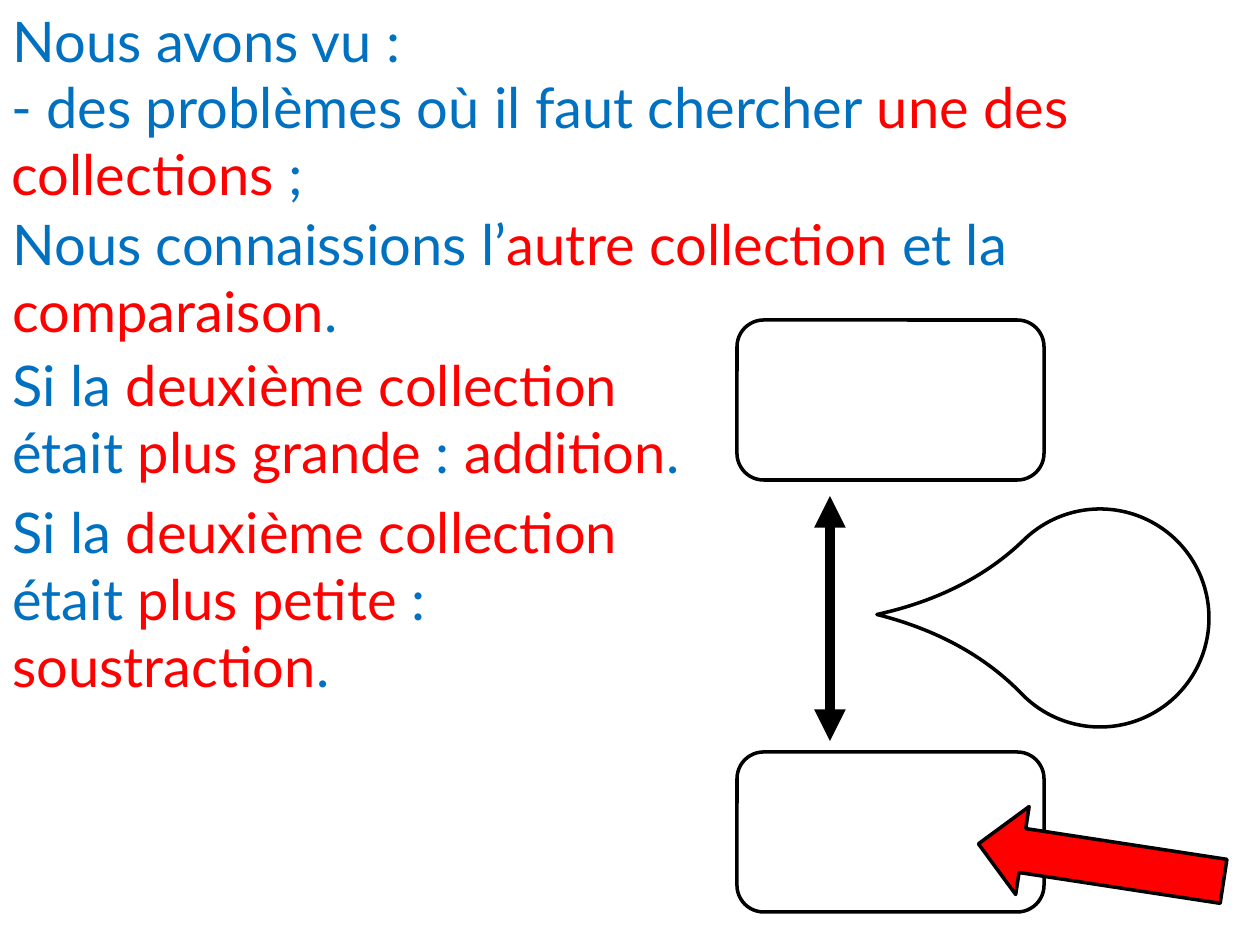
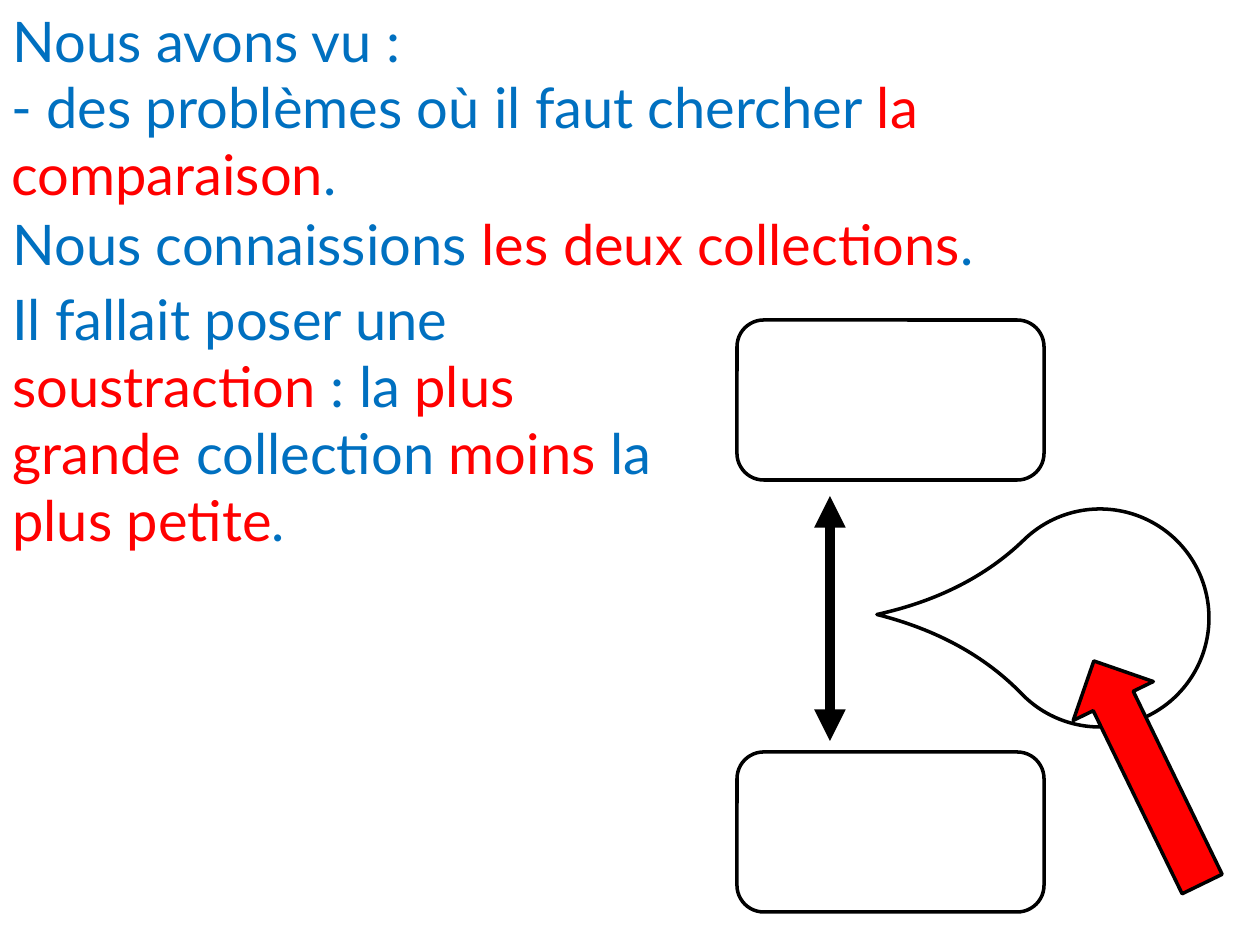
from lxml.etree import SubElement
from pptx import Presentation
from pptx.dml.color import RGBColor
from pptx.enum.shapes import MSO_CONNECTOR, MSO_SHAPE
from pptx.enum.text import MSO_ANCHOR, MSO_AUTO_SIZE, PP_ALIGN
from pptx.oxml.ns import qn
from pptx.util import Pt

EMU_PER_PX = 914400 / 126
SLIDE_W, SLIDE_H = 1260, 945
BLUE, RED, BLACK = "0070C0", "FF0000", "000000"
FONT, TEXT_SIZE = "Lato", 32
TITLE = "Nous avons vu :"
TITLE_BOX = (0, 0, SLIDE_W, 81)
DIAGRAM_BOX = (737, 320, 472, 592)
COLLECTION_W, COLLECTION_H = 307, 160

# Each statement: its box and its wording, alternately blue and red.
# Each pointer: left and top within the diagram, and rotation.
SLIDES = [
    {
        "statements": [
            ((-1, 66, SLIDE_W, 149),
             ["- des problèmes où il faut chercher ", "une des collections", " ;"]),
            ((0, 203, SLIDE_W, 149),
             ["Nous connaissions l’", "autre collection ", "et la ", "comparaison", "."]),
            ((0, 344, 709, 149),
             ["Si la ", "deuxième collection ", "était ", "plus grande ", ": ",
              "addition", "."]),
            ((0, 491, 709, 217),
             ["Si la ", "deuxième collection ", "était ", "plus petite ", ": ",
              "soustraction", "."]),
        ],
        "pointer": (240, 498, 188.7),
    },
    {
        "statements": [
            ((-1, 66, SLIDE_W, 149),
             ["- des problèmes où il faut chercher ", "la comparaison", "."]),
            ((0, 203, SLIDE_W, 81),
             ["Nous connaissions ", "les deux collections", "."]),
            ((0, 278, 709, 285),
             ["Il fallait poser une ", "soustraction", " : la ", "plus grande ",
              "collection ", "moins", " la ", "plus petite", "."]),
        ],
        "pointer": (287, 408, 244.1),
    },
]


def px(*lengths):
    return [round(length * EMU_PER_PX) for length in lengths]


def color(hex_code):
    return RGBColor.from_string(hex_code)


def write(frame, wording):
    frame.word_wrap = True
    frame.auto_size = MSO_AUTO_SIZE.SHAPE_TO_FIT_TEXT
    frame.vertical_anchor = MSO_ANCHOR.TOP
    paragraph = frame.paragraphs[0]
    paragraph.alignment = PP_ALIGN.LEFT
    for index, words in enumerate(wording):
        run = paragraph.add_run()
        run.text = words
        run.font.name = FONT
        run.font.size = Pt(TEXT_SIZE)
        run.font.color.rgb = color(RED if index % 2 else BLUE)


def add_title(slide, box):
    title = slide.shapes.title
    title.left, title.top, title.width, title.height = px(*box)
    write(title.text_frame, [TITLE])


def add_statement(slide, box, wording):
    write(slide.shapes.add_textbox(*px(*box)).text_frame, wording)


def add_outlined(slide, preset, box, fill=None, rotation=0):
    shape = slide.shapes.add_shape(preset, *px(*box))
    shape.shadow.inherit = False
    shape.rotation = rotation
    shape.line.color.rgb = color(BLACK)
    shape.line.width = Pt(2)
    if fill:
        shape.fill.solid()
        shape.fill.fore_color.rgb = color(fill)
    else:
        shape.fill.background()
    return shape


def add_double_arrow(slide, x, top, bottom):
    arrow = slide.shapes.add_connector(MSO_CONNECTOR.STRAIGHT, *px(x, top, x, bottom))
    arrow.line.color.rgb = color(BLACK)
    arrow.line.width = Pt(6)
    line = arrow.line._get_or_add_ln()
    for end in ("a:headEnd", "a:tailEnd"):
        SubElement(line, qn(end), type="triangle")
    SubElement(arrow._element.spPr, qn("a:effectLst"))


def add_diagram(slide, box, pointer):
    left, top, width, height = box
    # The two collections, at the top and bottom of the diagram
    for collection_top in (top, top + height - COLLECTION_H):
        add_outlined(slide, MSO_SHAPE.ROUNDED_RECTANGLE,
                     (left, collection_top, COLLECTION_W, COLLECTION_H))
    # Their comparison
    add_double_arrow(slide, left + 93, top + 176, top + 421)
    bubble_size = 218
    bubble = add_outlined(slide, MSO_SHAPE.TEAR,
                          (left + width - bubble_size, top + 189, bubble_size, bubble_size),
                          rotation=225.9)
    bubble.adjustments[0] = 1.447
    # Red arrow towards the part to find
    x, y, rotation = pointer
    add_outlined(slide, MSO_SHAPE.RIGHT_ARROW, (left + x, top + y, 248, 89), RED, rotation)


def add_problem_slide(presentation, statements, pointer):
    slide = presentation.slides.add_slide(presentation.slide_layouts[5])
    add_title(slide, TITLE_BOX)
    for box, wording in statements:
        add_statement(slide, box, wording)
    add_diagram(slide, DIAGRAM_BOX, pointer)


def main():
    presentation = Presentation()
    presentation.slide_width, presentation.slide_height = px(SLIDE_W, SLIDE_H)
    for content in SLIDES:
        add_problem_slide(presentation, **content)
    presentation.save("out.pptx")


if __name__ == "__main__":
    main()
